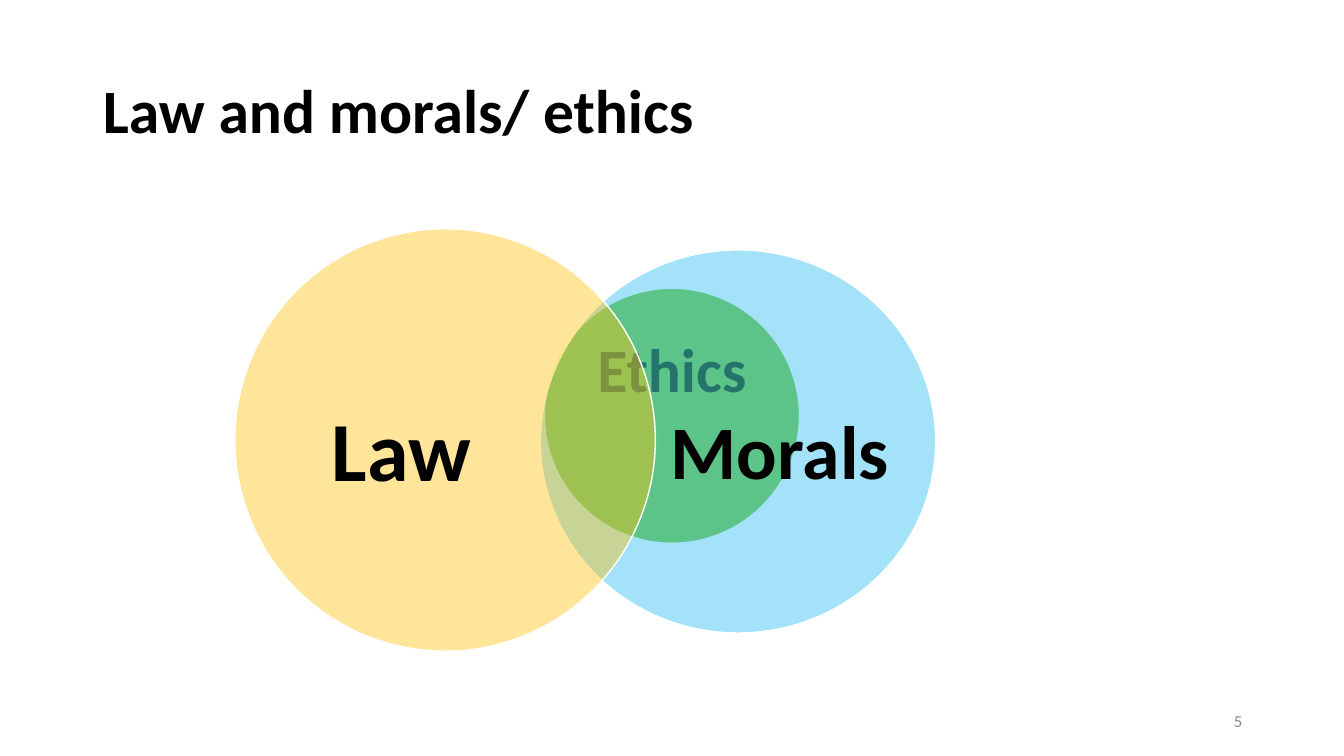
from lxml import etree
from pptx import Presentation
from pptx.dml.color import RGBColor
from pptx.enum.shapes import MSO_SHAPE
from pptx.enum.text import MSO_ANCHOR, MSO_AUTO_SIZE, PP_ALIGN
from pptx.oxml.ns import qn
from pptx.util import Inches, Pt

OVAL = MSO_SHAPE.OVAL
MIDDLE = MSO_ANCHOR.MIDDLE
NO_FIT = MSO_AUTO_SIZE.NONE
LEFT, CENTER, RIGHT = PP_ALIGN.LEFT, PP_ALIGN.CENTER, PP_ALIGN.RIGHT
TITLE_ONLY = 5


def paint(fill, color, opacity=100):
    """Give a fill a solid hex colour with an opacity in percent."""
    fill.solid()
    fill.fore_color.rgb = RGBColor.from_string(color)
    if opacity < 100:
        solid = fill._xPr.find(qn("a:solidFill"))
        etree.SubElement(solid[0], qn("a:alpha"), val=str(opacity * 1000))


class VennSlide:
    """Hold the style and the current slide, and add elements to it."""

    font = "Calibri"
    ink = "000000"
    outline = "FFFFFF"

    def __init__(self, deck):
        """Add a title-only slide to the deck."""
        self.page = deck.slides.add_slide(deck.slide_layouts[TITLE_ONLY])

    def set_text(self, shape, text, size, align, color, bold, opacity=100, spacing=0.9):
        """Set and format the single paragraph of a shape."""
        frame = shape.text_frame
        frame.text = text
        frame.word_wrap = True
        frame.auto_size = NO_FIT
        frame.vertical_anchor = MIDDLE
        para = frame.paragraphs[0]
        para.alignment = align
        para.line_spacing = spacing
        font = para.runs[0].font
        font.name = self.font
        font.size = Pt(size)
        font.bold = bold
        paint(font.fill, color, opacity)

    def title(self, text, left, top, width, height):
        """Place and format the title placeholder."""
        shape = self.page.shapes.title
        shape.left, shape.top = Inches(left), Inches(top)
        shape.width, shape.height = Inches(width), Inches(height)
        self.set_text(shape, text, 44, LEFT, self.ink, True)

    def circle(self, left, top, width, height, color, opacity=100):
        """Add an outlined ellipse."""
        shape = self.page.shapes.add_shape(
            OVAL, Inches(left), Inches(top), Inches(width), Inches(height))
        shape.shadow.inherit = False
        paint(shape.fill, color, opacity)
        paint(shape.line.fill, self.outline)
        shape.line.width = Pt(1)

    def text_box(self, left, top, width, height):
        """Add an empty text box."""
        return self.page.shapes.add_textbox(
            Inches(left), Inches(top), Inches(width), Inches(height))

    def label(self, text, left, top, width, height, size, opacity=100, raised=0):
        """Add a bold centred label without margins, raised by a bottom inset."""
        box = self.text_box(left, top, width, height)
        self.set_text(box, text, size, CENTER, self.ink, True, opacity)
        frame = box.text_frame
        frame.margin_left = frame.margin_right = frame.margin_top = 0
        frame.margin_bottom = Inches(raised)

    def number(self, text, left, top, width, height):
        """Add the page number."""
        box = self.text_box(left, top, width, height)
        self.set_text(box, text, 12, RIGHT, "8C8C8C", False, spacing=1.0)


def main():
    """Build the slide and save the deck."""
    deck = Presentation()
    deck.slide_width, deck.slide_height = Inches(13.33), Inches(7.5)
    venn = VennSlide(deck)
    venn.title("Law and morals/ ethics", 0.92, 0.4, 11.5, 1.45)
    venn.circle(5.4, 2.86, 2.53, 2.53, "92D050")
    venn.label("Ethics", 5.74, 3.3, 1.85, 1.14, 44, opacity=60, raised=0.34)
    venn.circle(5.36, 2.48, 3.92, 3.8, "00B0F0", 36)
    venn.label("Morals", 6.56, 3.47, 2.35, 2.09, 54)
    venn.circle(2.33, 2.27, 4.17, 4.19, "FFC000", 40)
    venn.label("Law", 2.73, 3.35, 2.5, 2.31, 60)
    venn.number("5", 9.42, 6.95, 3, 0.4)
    deck.save("out.pptx")


if __name__ == "__main__":
    main()
